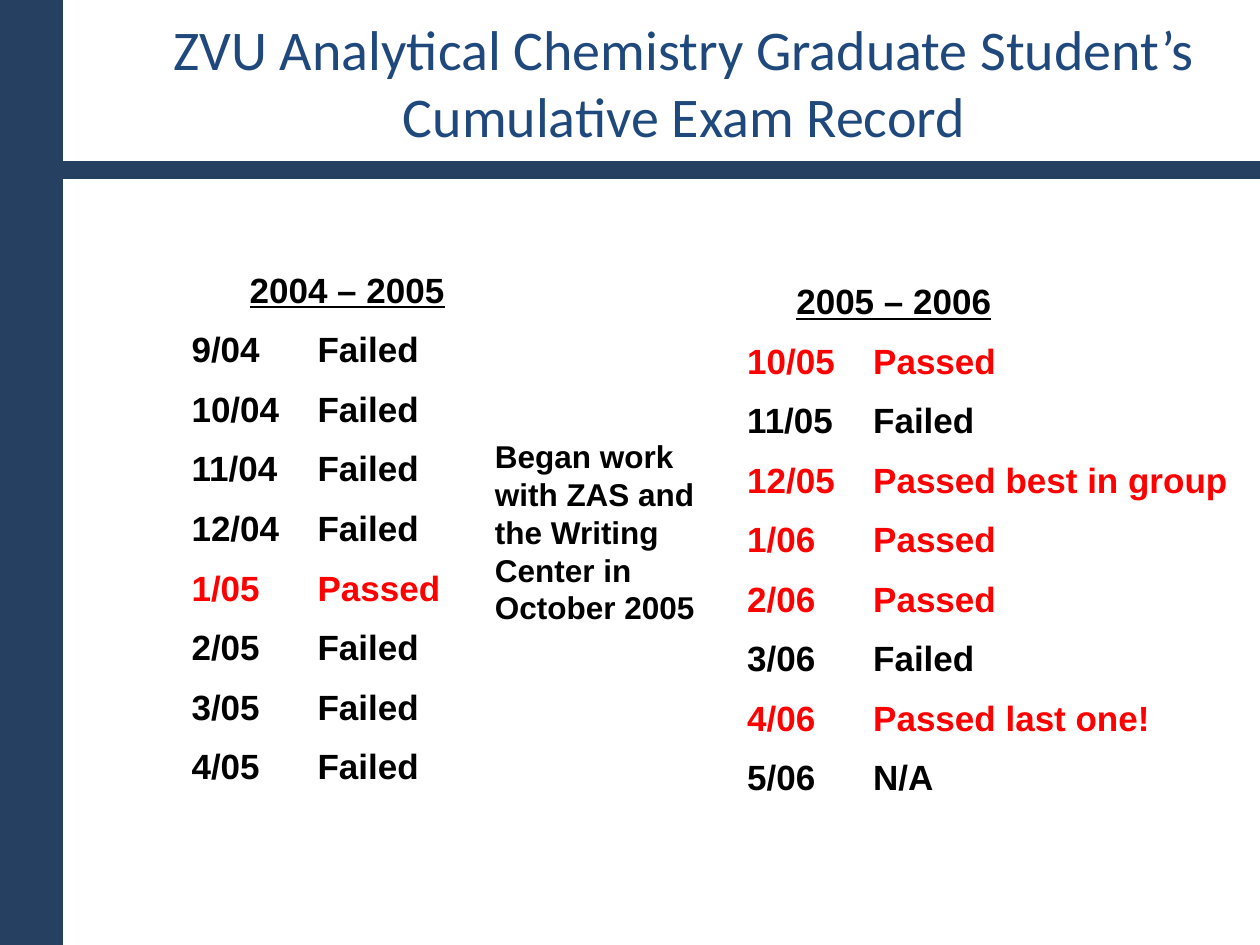
from dataclasses import dataclass

from lxml import etree
from pptx import Presentation
from pptx.dml.color import RGBColor
from pptx.enum.shapes import MSO_CONNECTOR, MSO_SHAPE
from pptx.enum.text import MSO_ANCHOR, MSO_AUTO_SIZE, PP_ALIGN
from pptx.oxml.ns import qn
from pptx.util import Inches, Pt

STRAIGHT = MSO_CONNECTOR.STRAIGHT
RECTANGLE = MSO_SHAPE.RECTANGLE
TOP, MIDDLE = MSO_ANCHOR.TOP, MSO_ANCHOR.MIDDLE
LEFT, CENTER = PP_ALIGN.LEFT, PP_ALIGN.CENTER
NO_FIT = MSO_AUTO_SIZE.NONE

SLIDE_WIDTH, SLIDE_HEIGHT = Inches(10), Inches(7.5)
TWO_CONTENT = 3
COLORS = {"title": "1F497D", "band": "254061", "plain": "000000", "passed": "FF0000"}


@dataclass(frozen=True)
class Area:
    left: float
    top: float
    width: float
    height: float

    def place(self, shape) -> None:
        shape.left, shape.top = Inches(self.left), Inches(self.top)
        shape.width, shape.height = Inches(self.width), Inches(self.height)


@dataclass(frozen=True)
class ExamYear:
    heading: str
    align: PP_ALIGN
    indent: float
    area: Area
    results: tuple[tuple[str, str], ...]


YEARS = (
    ExamYear("2004 – 2005", CENTER, 0, Area(1.42, 2.08, 2.67, 4.93), (
        ("9/04", "Failed"), ("10/04", "Failed"), ("11/04", "Failed"),
        ("12/04", "Failed"), ("1/05", "Passed"), ("2/05", "Failed"),
        ("3/05", "Failed"), ("4/05", "Failed"),
    )),
    ExamYear("2005 – 2006", LEFT, 0.39, Area(5.83, 2.17, 4.17, 4.93), (
        ("10/05", "Passed"), ("11/05", "Failed"), ("12/05", "Passed best in group"),
        ("1/06", "Passed"), ("2/06", "Passed"), ("3/06", "Failed"),
        ("4/06", "Passed last one!"), ("5/06", "N/A"),
    )),
)


def prepare_frame(box, area: Area, anchor: MSO_ANCHOR):
    area.place(box)
    frame = box.text_frame
    frame.word_wrap = True
    frame.auto_size = NO_FIT
    frame.vertical_anchor = anchor
    return frame


def add_span(para, text: str, size: int, color: str, font: str = "Arial",
             bold: bool = True, underline: bool = False) -> None:
    span = para.add_run()
    span.text = text
    span.font.name = font
    span.font.size = Pt(size)
    span.font.bold = bold
    span.font.underline = underline
    span.font.color.rgb = RGBColor.from_string(COLORS[color])


def format_line(para, align: PP_ALIGN = LEFT, indent: float = 0) -> None:
    para.alignment = align
    para.space_before = Pt(10)
    properties = para._p.get_or_add_pPr()
    properties.set("marL", str(Inches(indent)))
    properties.set("indent", "0")
    etree.SubElement(properties, qn("a:buNone"))


def fill_title(box) -> None:
    frame = prepare_frame(box, Area(0.95, 0, 8.96, 1.3), MIDDLE)
    para = frame.paragraphs[0]
    para.alignment = CENTER
    add_span(para, "ZVU Analytical Chemistry Graduate Student’s Cumulative Exam Record",
             32, "title", "Calibri", bold=False)


def fill_year(box, year: ExamYear) -> None:
    frame = prepare_frame(box, year.area, TOP)
    heading = frame.paragraphs[0]
    format_line(heading, year.align, year.indent)
    add_span(heading, year.heading, 20, "plain", underline=True)
    for date, result in year.results:
        para = frame.add_paragraph()
        format_line(para)
        color = "passed" if result.startswith("Passed") else "plain"
        add_span(para, f"{date}\t{result}", 20, color)


def add_note(slide) -> None:
    box = slide.shapes.add_textbox(0, 0, 0, 0)
    frame = prepare_frame(box, Area(3.83, 3.42, 1.83, 1.62), TOP)
    para = frame.paragraphs[0]
    para.space_before = Pt(10)
    add_span(para, "Began work with ZAS and the Writing Center in October 2005", 18, "plain")


def add_bands(slide) -> None:
    color = RGBColor.from_string(COLORS["band"])
    height = int(SLIDE_HEIGHT * 0.18)
    rule = slide.shapes.add_connector(STRAIGHT, 0, height, SLIDE_WIDTH, height)
    rule.line.color.rgb = color
    rule.line.width = Pt(10)
    etree.SubElement(rule._element.spPr, qn("a:effectLst"))
    side = slide.shapes.add_shape(RECTANGLE, 0, 0, int(SLIDE_WIDTH * 0.05), SLIDE_HEIGHT)
    side.shadow.inherit = False
    side.fill.solid()
    side.fill.fore_color.rgb = color
    side.line.fill.background()


def main() -> None:
    deck = Presentation()
    deck.slide_width, deck.slide_height = SLIDE_WIDTH, SLIDE_HEIGHT
    slide = deck.slides.add_slide(deck.slide_layouts[TWO_CONTENT])
    title, *lists = slide.placeholders
    fill_title(title)
    for box, year in zip(lists, YEARS):
        fill_year(box, year)
    add_note(slide)
    add_bands(slide)
    deck.save("out.pptx")


if __name__ == "__main__":
    main()
